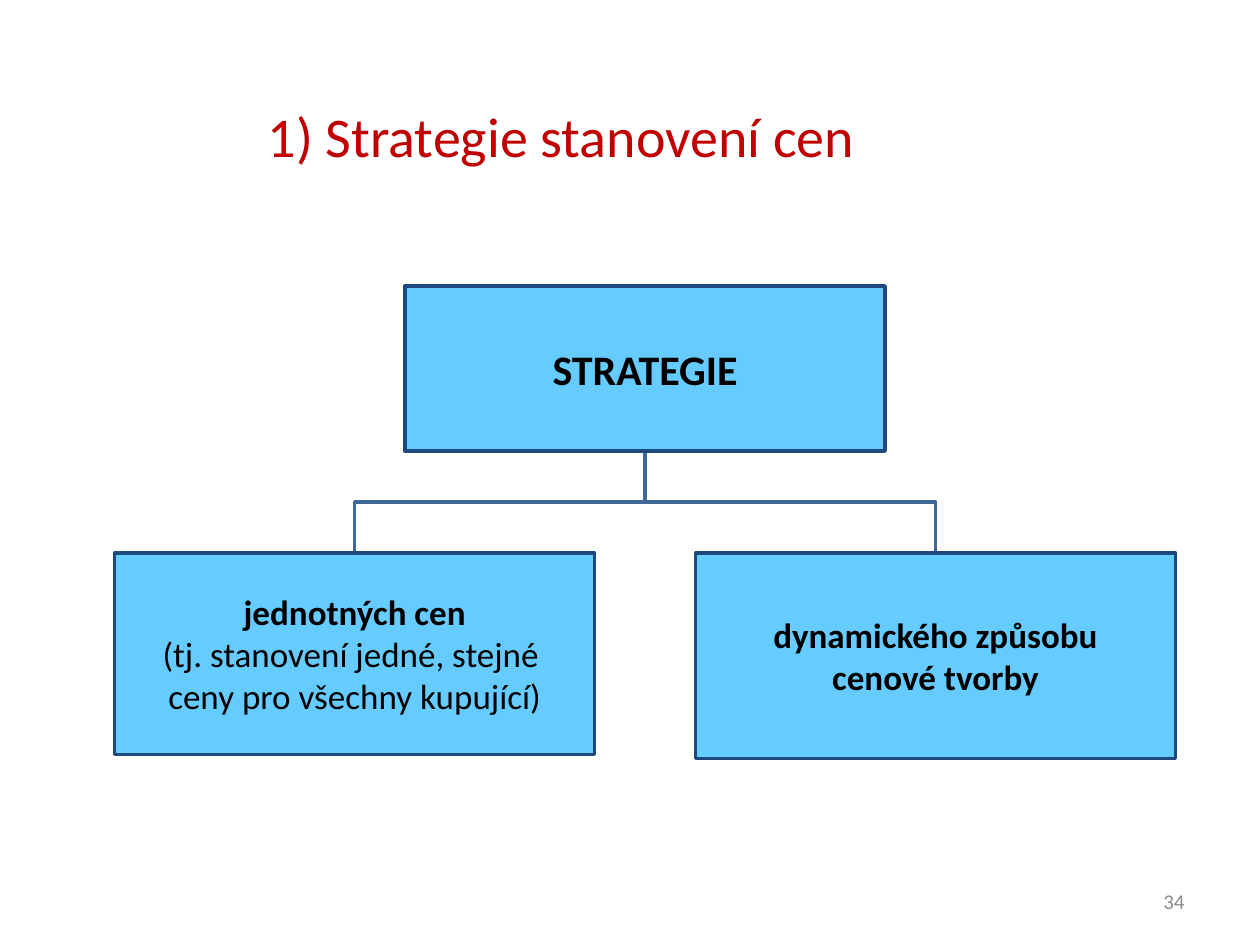
from dataclasses import dataclass

from pptx import Presentation
from pptx.dml.color import RGBColor
from pptx.enum.shapes import MSO_SHAPE
from pptx.enum.text import MSO_ANCHOR, PP_ALIGN
from pptx.util import Inches, Pt


@dataclass(frozen=True)
class Theme:
    font: str = "Calibri"
    title_color: RGBColor = RGBColor(0xC0, 0x00, 0x00)
    text_color: RGBColor = RGBColor(0x00, 0x00, 0x00)
    number_color: RGBColor = RGBColor(0x8C, 0x8C, 0x8C)
    box_fill: RGBColor = RGBColor(0x66, 0xCC, 0xFF)
    box_line: RGBColor = RGBColor(0x1F, 0x49, 0x7D)
    branch_line: RGBColor = RGBColor(0x3F, 0x67, 0x97)
    title_size: int = 32
    root_size: int = 24
    child_size: int = 20
    number_size: int = 12
    line_width: int = 2


class SlideBuilder:
    def __init__(self, slide, theme):
        self.slide = slide
        self.theme = theme

    def format_paragraph(self, paragraph, size, color, align, bold=False):
        paragraph.alignment = align
        for run in paragraph.runs:
            run.font.name = self.theme.font
            run.font.size = Pt(size)
            run.font.bold = bold
            run.font.color.rgb = color

    def title(self, text, left, top, width, height):
        shape = self.slide.shapes.title
        shape.left, shape.top = Inches(left), Inches(top)
        shape.width, shape.height = Inches(width), Inches(height)
        shape.text_frame.text = text
        self.format_paragraph(shape.text_frame.paragraphs[0], self.theme.title_size,
                              self.theme.title_color, PP_ALIGN.CENTER)

    def box(self, lines, size, left, top, width, height):
        """Draw a box; lines holds pairs of text and bold flag."""
        shape = self.slide.shapes.add_shape(
            MSO_SHAPE.RECTANGLE, Inches(left), Inches(top), Inches(width), Inches(height))
        shape.shadow.inherit = False
        shape.fill.solid()
        shape.fill.fore_color.rgb = self.theme.box_fill
        shape.line.color.rgb = self.theme.box_line
        shape.line.width = Pt(self.theme.line_width)
        frame = shape.text_frame
        frame.word_wrap = True
        frame.vertical_anchor = MSO_ANCHOR.MIDDLE
        frame.margin_left = frame.margin_right = Inches(0.01)
        frame.margin_top = frame.margin_bottom = Inches(0.01)
        frame.text = "\n".join(text for text, bold in lines)
        for paragraph, (text, bold) in zip(frame.paragraphs, lines):
            self.format_paragraph(paragraph, size, self.theme.text_color,
                                  PP_ALIGN.CENTER, bold)

    def branch(self, start_x, start_y, end_x, end_y):
        """Draw a line down, across and down again."""
        middle_y = (start_y + end_y) / 2
        builder = self.slide.shapes.build_freeform(
            Inches(start_x), Inches(start_y), scale=1.0)
        corners = [(start_x, middle_y), (end_x, middle_y), (end_x, end_y)]
        builder.add_line_segments([(Inches(x), Inches(y)) for x, y in corners], close=False)
        shape = builder.convert_to_shape()
        shape.shadow.inherit = False
        shape.fill.background()
        shape.line.color.rgb = self.theme.branch_line
        shape.line.width = Pt(self.theme.line_width)

    def slide_number(self, text, left, top, width, height):
        shape = self.slide.shapes.add_textbox(
            Inches(left), Inches(top), Inches(width), Inches(height))
        frame = shape.text_frame
        frame.word_wrap = True
        frame.vertical_anchor = MSO_ANCHOR.MIDDLE
        frame.text = text
        self.format_paragraph(frame.paragraphs[0], self.theme.number_size,
                              self.theme.number_color, PP_ALIGN.RIGHT)


def main():
    presentation = Presentation()
    presentation.slide_width, presentation.slide_height = Inches(10), Inches(7.5)
    theme = Theme()
    slide = presentation.slides.add_slide(presentation.slide_layouts[5])
    builder = SlideBuilder(slide, theme)

    builder.title("1) Strategie stanovení cen", 0.52, 0.75, 7.87, 0.64)

    # Tree geometry: the children sit evenly on both sides of the root
    center_x, offset_x, box_width = 5.12, 2.305, 3.81
    root_top, root_height, child_top = 2.27, 1.31, 4.39
    children = [
        (-1, 1.6, [("jednotných cen", True),
                   ("(tj. stanovení jedné, stejné \vceny pro všechny kupující)", False)]),
        (1, 1.63, [("dynamického způsobu", True), ("cenové tvorby", True)]),
    ]

    # Branches lie behind the boxes
    for side, height, lines in children:
        builder.branch(center_x, root_top + root_height,
                       center_x + side * offset_x, child_top)

    # Boxes
    builder.box([("STRATEGIE", True)], theme.root_size,
                center_x - box_width / 2, root_top, box_width, root_height)
    for side, height, lines in children:
        builder.box(lines, theme.child_size,
                    center_x + side * offset_x - box_width / 2, child_top,
                    box_width, height)

    builder.slide_number("34", 7.17, 6.95, 2.33, 0.4)
    presentation.save("out.pptx")


if __name__ == "__main__":
    main()
